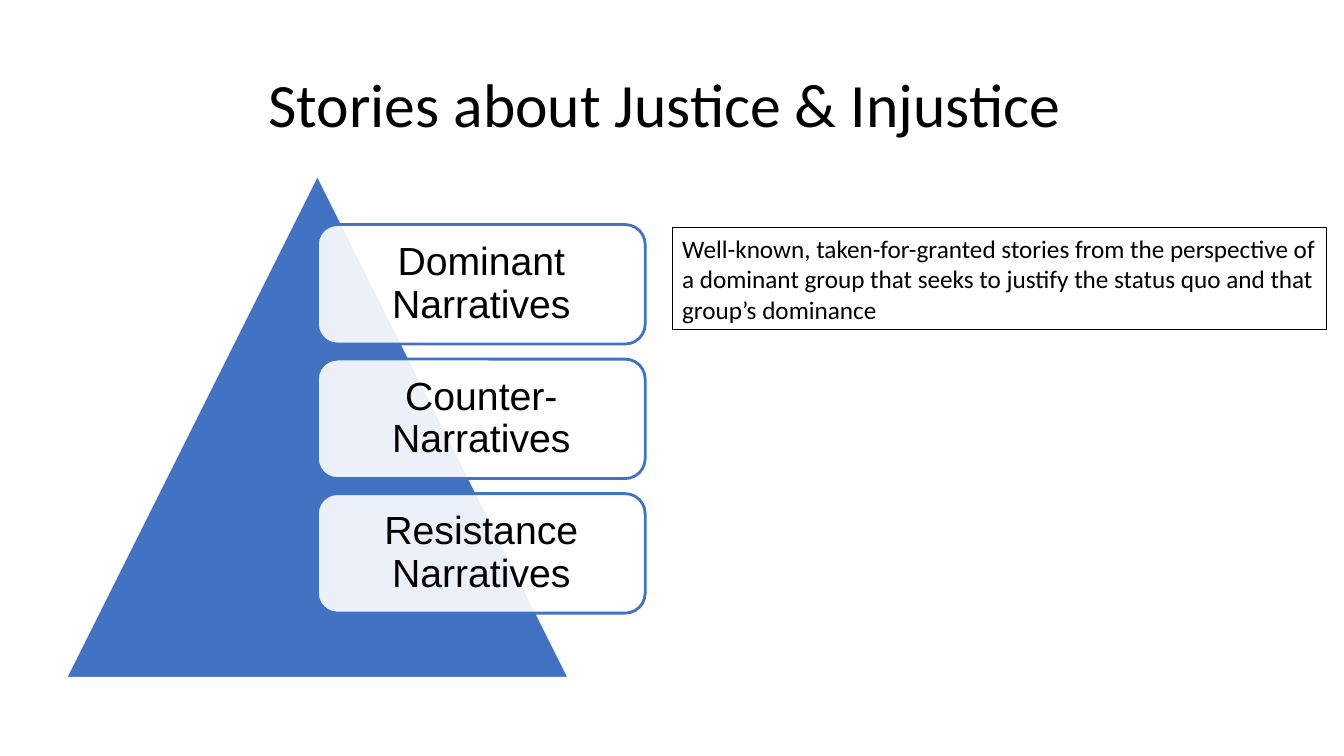
from lxml import etree
from pptx import Presentation
from pptx import util as u
from pptx.dml.color import RGBColor
from pptx.enum import shapes, text
from pptx.oxml.ns import qn

TITLE = "Stories about Justice & Injustice "
NARRATIVES = ["Dominant Narratives", "Counter-Narratives", "Resistance Narratives"]
DEFINITION = (
    "Well-known, taken-for-granted stories from the perspective of a dominant group "
    "that seeks to justify the status quo and that group’s dominance"
)
BLUE, WHITE, BLACK = "4372C3", "FFFFFF", "000000"
SLIDE_WIDTH, SLIDE_HEIGHT = 33.87, 19.05
TRIANGLE_LEFT, TRIANGLE_TOP, TRIANGLE_SIZE = 1.65, 4.39, 12.7
CARD_TOP, CARD_WIDTH, CARD_HEIGHT, CARD_GAP = 5.66, 8.26, 3.01, 0.38


def color(value):
    return RGBColor.from_string(value)


def add_box(page, kind, area, line, weight, fill=None, opacity=100):
    box = page.shapes.add_shape(kind, *map(u.Cm, area))
    box.shadow.inherit = False
    box.line.color.rgb = color(line)
    box.line.width = u.Pt(weight)
    if fill:
        box.fill.solid()
        box.fill.fore_color.rgb = color(fill)
        if opacity < 100:
            tint = box.fill._xPr.find(".//" + qn("a:srgbClr"))
            etree.SubElement(tint, qn("a:alpha"), val=str(opacity * 1000))
    else:
        box.fill.background()
    return box


def write(box, words, font, size, align, spacing=1.0, inset=(0.25, 0.13)):
    frame = box.text_frame
    frame.word_wrap = True
    frame.vertical_anchor = text.MSO_ANCHOR.MIDDLE
    frame.margin_left = frame.margin_right = u.Cm(inset[0])
    frame.margin_top = frame.margin_bottom = u.Cm(inset[1])
    para = frame.paragraphs[0]
    para.alignment = align
    para.line_spacing = spacing
    span = para.add_run()
    span.text = words
    span.font.name = font
    span.font.size = u.Pt(size)
    span.font.color.rgb = color(BLACK)


def main():
    deck = Presentation()
    deck.slide_width, deck.slide_height = u.Cm(SLIDE_WIDTH), u.Cm(SLIDE_HEIGHT)
    page = deck.slides.add_slide(deck.slide_layouts[6])
    kinds, aligns = shapes.MSO_SHAPE, text.PP_ALIGN

    title = page.shapes.add_textbox(0, u.Cm(1.63), deck.slide_width, u.Cm(2.16))
    write(title, TITLE, "Calibri", 44, aligns.CENTER, 0.9)

    triangle = (TRIANGLE_LEFT, TRIANGLE_TOP, TRIANGLE_SIZE, TRIANGLE_SIZE)
    add_box(page, kinds.ISOSCELES_TRIANGLE, triangle, WHITE, 2, BLUE)

    card_left = TRIANGLE_LEFT + TRIANGLE_SIZE / 2
    for index, narrative in enumerate(NARRATIVES):
        top = CARD_TOP + index * (CARD_HEIGHT + CARD_GAP)
        area = (card_left, top, CARD_WIDTH, CARD_HEIGHT)
        card = add_box(page, kinds.ROUNDED_RECTANGLE, area, BLUE, 2, WHITE, 90)
        write(card, narrative, "Arial", 28, aligns.CENTER, 0.9, (0.44, 0.44))

    definition = add_box(page, kinds.RECTANGLE, (16.94, 5.74, 16.48, 2.57), BLACK, 0.75)
    write(definition, DEFINITION, "Calibri", 18, aligns.LEFT)
    deck.save("out.pptx")


if __name__ == "__main__":
    main()
